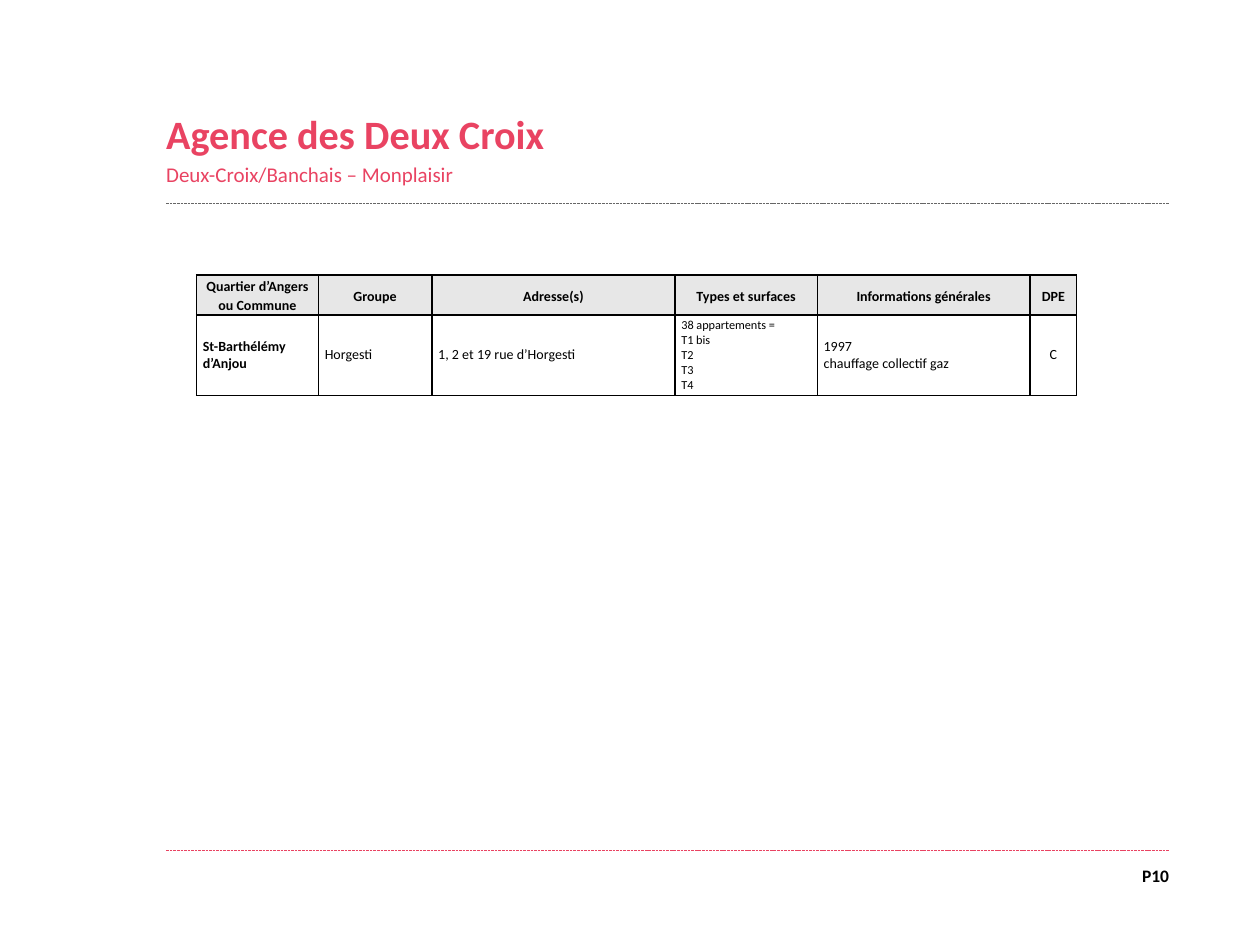
from lxml import etree
from pptx import Presentation
from pptx import util as u
from pptx.dml.color import RGBColor
from pptx.enum import dml, shapes, text
from pptx.oxml import parse_xml
from pptx.oxml.ns import nsdecls, qn

PINK = RGBColor(0xE9, 0x43, 0x62)
GRAY = RGBColor(0x66, 0x66, 0x66)
BLACK = RGBColor(0x00, 0x00, 0x00)
HEADER_FILL = RGBColor(0xE7, 0xE7, 0xE7)
LEFT, RIGHT = 95, 668
CENTER, END = text.PP_ALIGN.CENTER, text.PP_ALIGN.RIGHT


def format_paragraph(paragraph, size, color, bold, **layout):
    """Apply the font, then any paragraph settings."""
    paragraph.font.color.rgb = color
    for name, value in {"name": "Calibri", "size": u.Pt(size), "bold": bold}.items():
        setattr(paragraph.font, name, value)
    for name, value in layout.items():
        setattr(paragraph, name, value)


def add_text_box(left, top, width, height, content, anchor):
    """Add a text box without margins and return its paragraphs."""
    box = slide.shapes.add_textbox(u.Pt(left), u.Pt(top), u.Pt(width), u.Pt(height))
    frame = box.text_frame
    settings = {"margin_left": 0, "margin_right": 0, "margin_top": 0,
                "margin_bottom": 0, "word_wrap": True, "vertical_anchor": anchor,
                "text": content}
    for name, value in settings.items():
        setattr(frame, name, value)
    return frame.paragraphs


presentation = Presentation()
presentation.slide_width, presentation.slide_height = u.Pt(720), u.Pt(540)
slide = presentation.slides.add_slide(presentation.slide_layouts[6])

# Dashed rules under the heading and above the page number
for y, color in ((116, GRAY), (486, PINK)):
    rule = slide.shapes.add_connector(
        shapes.MSO_CONNECTOR.STRAIGHT, u.Pt(LEFT), u.Pt(y), u.Pt(RIGHT), u.Pt(y))
    rule.line.color.rgb = color
    rule.line.width = u.Pt(0.5)
    rule.line.dash_style = dml.MSO_LINE.SQUARE_DOT
    etree.SubElement(rule.element.spPr, qn("a:effectLst"))

# Page number
page_number, = add_text_box(643.5, 494.6, 24.5, 14.4, "P10", text.MSO_ANCHOR.TOP)
format_paragraph(page_number, 10, BLACK, True, alignment=END)

# Heading
title, subtitle = add_text_box(
    LEFT, 52.6, 449, 54, "Agence des Deux Croix\nDeux-Croix/Banchais – Monplaisir",
    text.MSO_ANCHOR.BOTTOM)
format_paragraph(title, 23, PINK, True)
format_paragraph(subtitle, 12, PINK, False, space_before=u.Pt(2.4))

# Housing table
column_widths = (69.7, 64.8, 139, 81.3, 121.6, 26.6)
row_heights = (23, 45.9)
rows = (
    ("Quartier d’Angers ou Commune", "Groupe", "Adresse(s)", "Types et surfaces",
     "Informations générales", "DPE"),
    ("St-Barthélémy d’Anjou", "Horgesti", "1, 2 et 19 rue d’Horgesti",
     "38 appartements =\nT1 bis\nT2\nT3\nT4", "1997\nchauffage collectif gaz", "C"),
)
table = slide.shapes.add_table(
    len(rows), len(column_widths), u.Pt(112.3), u.Pt(157),
    u.Pt(sum(column_widths)), u.Pt(sum(row_heights))).table
for column, width in zip(table.columns, column_widths):
    column.width = u.Pt(width)
for row, height in zip(table.rows, row_heights):
    row.height = u.Pt(height)

cell_format = {"margin_left": u.Pt(3.6), "margin_right": u.Pt(3.6), "margin_top": 0,
               "margin_bottom": 0, "vertical_anchor": text.MSO_ANCHOR.MIDDLE}
for row_index, row in enumerate(rows):
    header = row_index == 0
    for column_index, content in enumerate(row):
        cell = table.cell(row_index, column_index)
        cell.text = content
        for name, value in cell_format.items():
            setattr(cell, name, value)

        # Borders come before the fill in the cell properties
        properties = cell._tc.get_or_add_tcPr()
        for side in "LRTB":
            properties.append(parse_xml(
                f'<a:ln{side} {nsdecls("a")} w="12700"><a:solidFill>'
                f'<a:srgbClr val="{BLACK}"/></a:solidFill></a:ln{side}>'))
        if header:
            cell.fill.solid()
            cell.fill.fore_color.rgb = HEADER_FILL
        else:
            cell.fill.background()

        size = 7 if not header and column_index == 3 else 8
        centered = header or column_index == 5
        for paragraph in cell.text_frame.paragraphs:
            format_paragraph(
                paragraph, size, BLACK, header or column_index == 0,
                alignment=CENTER if centered else text.PP_ALIGN.LEFT,
                line_spacing=1.15 if header else 1.0)

presentation.save("out.pptx")
